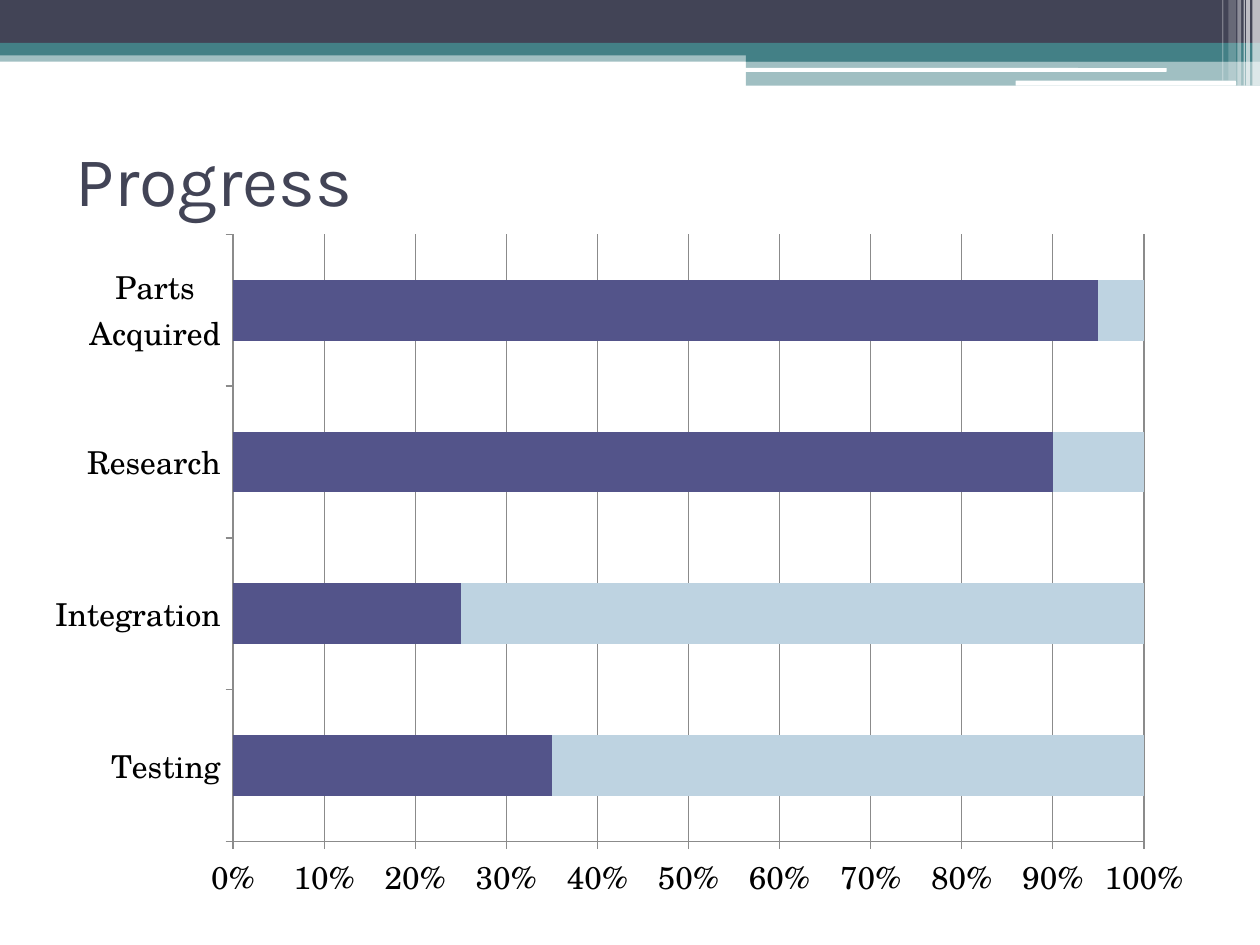
from lxml import etree
from pptx import Presentation
from pptx.chart.data import CategoryChartData
from pptx.dml.color import RGBColor
from pptx.enum.chart import XL_CHART_TYPE, XL_TICK_MARK
from pptx.enum.shapes import MSO_SHAPE
from pptx.enum.text import MSO_ANCHOR, PP_ALIGN
from pptx.oxml.ns import qn
from pptx.util import Inches, Pt

RECT, ROUND = MSO_SHAPE.RECTANGLE, MSO_SHAPE.ROUNDED_RECTANGLE
STACKED = XL_CHART_TYPE.BAR_STACKED_100
TICK_OUT, TICK_NONE = XL_TICK_MARK.OUTSIDE, XL_TICK_MARK.NONE
LEFT, MIDDLE = PP_ALIGN.LEFT, MSO_ANCHOR.MIDDLE

COLORS = {"navy": "424456", "teal": "438086", "white": "FFFFFF", "black": "000000",
          "done": "53548A", "remaining": "BED3E1", "grid": "8B8B8B"}
TITLE_FONT, CHART_FONT = "Karla", "TeX Gyre Schola"

# Content
TITLE = "Progress"
STAGES = ["Testing", "Integration", "Research", "Parts Acquired"]
SERIES = [("Series 1", [35, 25, 90, 95], "done"),
          ("Series 2", [65, 75, 10, 5], "remaining")]

# Header bands: shape, left, top, width, height, color, opacity %
BANDS = [
    (RECT, 0, 0.4, 10, 0.09, "teal", 50),
    (RECT, 0, 0, 10, 0.34, "navy", 100),
    (RECT, 0, 0.34, 10, 0.1, "teal", 100),
    (RECT, 5.92, 0.39, 4.08, 0.1, "teal", 100),
    (RECT, 5.92, 0.48, 4.08, 0.2, "teal", 50),
    (ROUND, 5.91, 0.54, 3.35, 0.03, "white", 100),
    (ROUND, 8.06, 0.64, 1.75, 0.04, "white", 100),
]
# Light stripes at the right edge: left, width, height, opacity %
STRIPES = [(9.94, 0.06, 0.68, 65), (9.89, 0.03, 0.68, 65), (9.87, 0.01, 0.68, 60),
           (9.82, 0.03, 0.68, 40), (9.75, 0.06, 0.64, 20), (9.7, 0.01, 0.64, 30)]

CHART_BOX = (0.25, 1.75, 9.33, 5.5)
PLOT_BOX = (1.85, 1.86, 7.23, 4.82)


def rgb(name):
    return RGBColor.from_string(COLORS[name])


def add_band(slide, kind, left, top, width, height, color, opacity):
    band = slide.shapes.add_shape(kind, *map(Inches, (left, top, width, height)))
    band.shadow.inherit = False
    band.line.fill.background()
    band.fill.solid()
    band.fill.fore_color.rgb = rgb(color)
    if opacity < 100:
        fill_color = band.fill._xPr.find(qn("a:solidFill"))[0]
        etree.SubElement(fill_color, qn("a:alpha"), val=str(opacity * 1000))


def write_text(frame, text, *, size, font, color, align=LEFT, anchor=MIDDLE):
    frame.word_wrap = True
    frame.vertical_anchor = anchor
    paragraph = frame.paragraphs[0]
    paragraph.alignment = align
    run = paragraph.add_run()
    run.text = text
    run.font.size, run.font.name = Pt(size), font
    run.font.color.rgb = rgb(color)


def place_plot(chart):
    """Fix the inner plot area as fractions of the chart frame."""
    plot_area = chart._chartSpace.chart.plotArea
    for old in plot_area.findall(qn("c:layout")):
        plot_area.remove(old)
    layout = etree.Element(qn("c:layout"))
    plot_area.insert(0, layout)
    manual = etree.SubElement(layout, qn("c:manualLayout"))
    left, top, width, height = CHART_BOX
    x, y, w, h = PLOT_BOX
    settings = [("layoutTarget", "inner"), ("xMode", "edge"), ("yMode", "edge"),
                ("x", (x - left) / width), ("y", (y - top) / height),
                ("w", w / width), ("h", h / height)]
    for tag, value in settings:
        etree.SubElement(manual, qn(f"c:{tag}"), val=str(value))


def add_progress_chart(slide):
    data = CategoryChartData()
    data.categories = STAGES
    for name, values, _ in SERIES:
        data.add_series(name, values)
    chart = slide.shapes.add_chart(STACKED, *map(Inches, CHART_BOX), data).chart
    chart.has_title = False
    chart.has_legend = False
    chart.font.size, chart.font.name = Pt(18), CHART_FONT
    chart.font.color.rgb = rgb("black")

    bars = chart.plots[0]
    bars.gap_width, bars.overlap, bars.vary_by_categories = 150, 100, False
    for series, (_, _, color) in zip(bars.series, SERIES):
        series.format.fill.solid()
        series.format.fill.fore_color.rgb = rgb(color)

    percent_axis = chart.value_axis
    percent_axis.has_major_gridlines = True
    percent_axis.minimum_scale, percent_axis.maximum_scale = 0, 1
    percent_axis.major_unit = 0.1
    percent_axis.tick_labels.number_format = "0%"
    percent_axis.tick_labels.number_format_is_linked = False
    for axis in (chart.category_axis, percent_axis):
        axis.major_tick_mark, axis.minor_tick_mark = TICK_OUT, TICK_NONE
    for ruled in (chart.category_axis, percent_axis, percent_axis.major_gridlines):
        ruled.format.line.color.rgb = rgb("grid")
        ruled.format.line.width = Pt(0.75)
    place_plot(chart)


def main():
    prs = Presentation()
    prs.slide_width, prs.slide_height = Inches(10), Inches(7.5)
    slide = prs.slides.add_slide(prs.slide_layouts[5])

    # Header decoration
    for band in BANDS:
        add_band(slide, *band)
    for left, width, height, opacity in STRIPES:
        add_band(slide, RECT, left, 0, width, height, "white", opacity)

    # Title
    title = slide.shapes.title
    title.left, title.top, title.width, title.height = map(Inches, (0.5, 0.83, 9, 1.17))
    write_text(title.text_frame, TITLE, size=40, font=TITLE_FONT, color="navy")

    # Progress by stage
    add_progress_chart(slide)
    prs.save("out.pptx")


if __name__ == "__main__":
    main()
